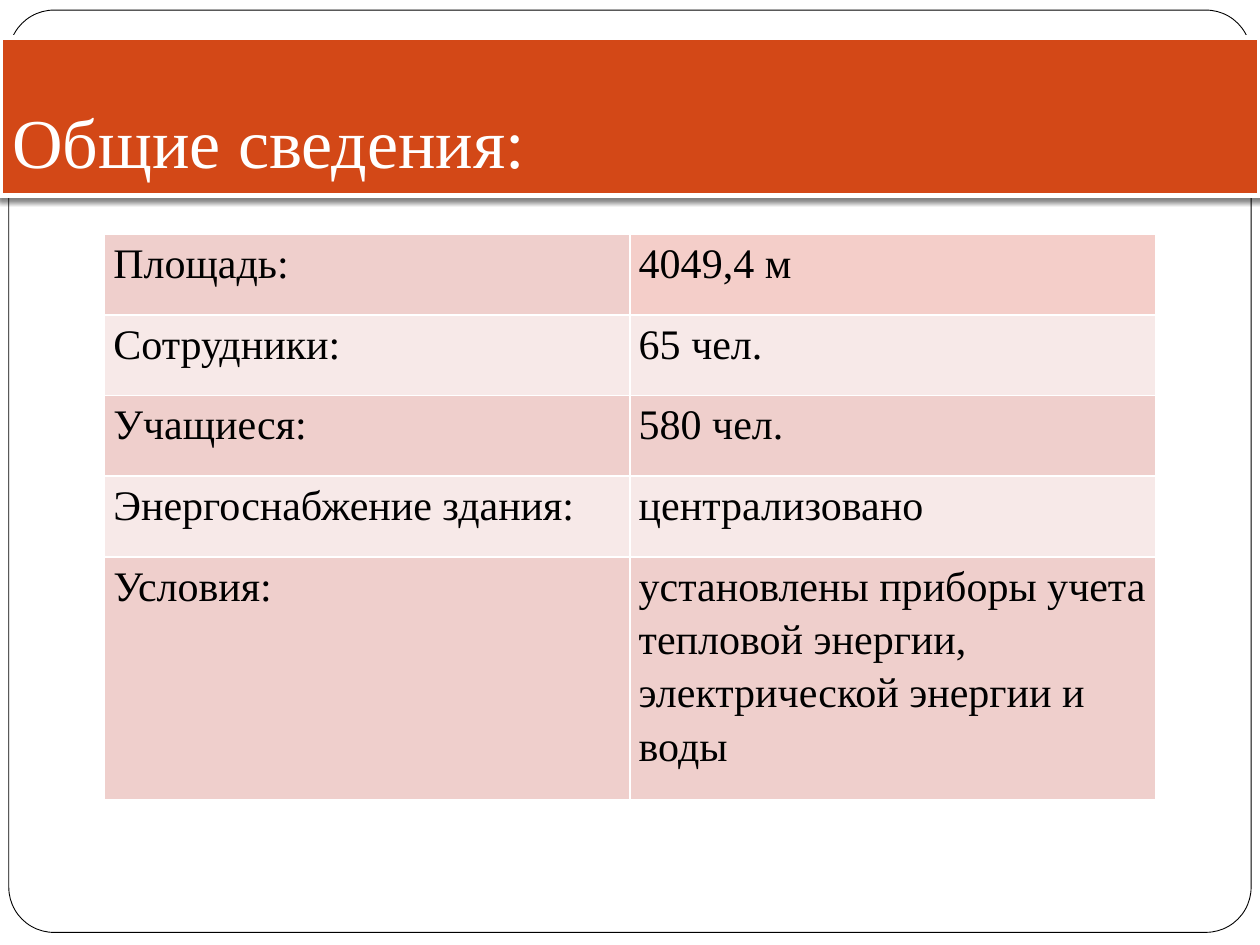
"""Build the general information slide with its title band and table."""
from lxml import etree
from pptx import Presentation
from pptx.dml.color import RGBColor
from pptx.enum.shapes import MSO_SHAPE
from pptx.enum.text import MSO_ANCHOR, PP_ALIGN
from pptx.oxml import parse_xml
from pptx.oxml.ns import nsdecls, qn
from pptx.util import Inches, Pt

RECT, ROUND = MSO_SHAPE.RECTANGLE, MSO_SHAPE.ROUNDED_RECTANGLE
TOP, BOTTOM = MSO_ANCHOR.TOP, MSO_ANCHOR.BOTTOM
LEFT = PP_ALIGN.LEFT
WHITE = RGBColor(0xFF, 0xFF, 0xFF)
BLACK = RGBColor(0, 0, 0)
ORANGE = RGBColor(0xD3, 0x48, 0x17)
ROSE = RGBColor(0xEF, 0xCF, 0xCC)
PALE = RGBColor(0xF7, 0xE9, 0xE8)
PEACH = RGBColor(0xF4, 0xCE, 0xC9)
FACTS = [
    ("Площадь:", "4049,4 м"),
    ("Сотрудники:", "65 чел."),
    ("Учащиеся:", "580 чел."),
    ("Энергоснабжение здания:", "централизовано"),
    ("Условия:", "установлены приборы учета тепловой энергии, электрической энергии и воды"),
]


class Deck:
    font = "Times New Roman"

    def __init__(self, width, height):
        self.prs = Presentation()
        self.prs.slide_width, self.prs.slide_height = Inches(width), Inches(height)
        self.s = self.prs.slides.add_slide(self.prs.slide_layouts[6])

    def shape(self, kind, box, fill, line, weight):
        sp = self.s.shapes.add_shape(kind, *map(Inches, box))
        sp.shadow.inherit = False
        sp.fill.solid()
        sp.fill.fore_color.rgb = fill
        sp.line.color.rgb = line
        sp.line.width = Pt(weight)
        return sp

    def frame(self, box, radius):
        self.shape(ROUND, box, WHITE, BLACK, 0.5).adjustments[0] = radius

    def text(self, tf, text, size, color):
        p = tf.paragraphs[0]
        p.alignment = LEFT
        r = p.add_run()
        r.text = text
        r.font.name, r.font.size = self.font, Pt(size)
        r.font.color.rgb = color
        return p

    def title(self, box, text):
        sp = self.shape(RECT, box, ORANGE, WHITE, 3)
        effects = sp._element.spPr.find(qn("a:effectLst"))
        effects.append(parse_xml(
            f'<a:outerShdw {nsdecls("a")} blurRad="{Pt(3)}" dist="{Pt(2)}" dir="5400000" rotWithShape="0">'
            '<a:srgbClr val="000000"><a:alpha val="50000"/></a:srgbClr></a:outerShdw>'))
        tf = sp.text_frame
        tf.word_wrap = True
        tf.vertical_anchor = BOTTOM
        tf.margin_left = tf.margin_right = tf.margin_bottom = Inches(0.1)
        tf.margin_top = Inches(0.05)
        self.text(tf, text, 40, WHITE)

    def borders(self, cell):
        tcPr = cell._tc.get_or_add_tcPr()
        for side in ("lnL", "lnR", "lnT", "lnB"):
            ln = etree.SubElement(tcPr, qn(f"a:{side}"), w=str(Pt(1)))
            fill = etree.SubElement(ln, qn("a:solidFill"))
            etree.SubElement(fill, qn("a:srgbClr"), val=str(WHITE))

    def cell(self, cell, text, fill):
        self.borders(cell)
        cell.fill.solid()
        cell.fill.fore_color.rgb = fill
        cell.vertical_anchor = TOP
        cell.margin_left = cell.margin_right = Inches(0.07)
        cell.margin_top = cell.margin_bottom = 0
        p = self.text(cell.text_frame, text, 24, BLACK)
        p.line_spacing = 1.15
        p.space_before = p.space_after = Pt(6)

    def table(self, box, rows, heights):
        table = self.s.shapes.add_table(len(rows), len(rows[0]), *map(Inches, box)).table
        table.first_row = table.horz_banding = False
        for i, (row, height) in enumerate(zip(rows, heights)):
            table.rows[i].height = Inches(height)
            for j, text in enumerate(row):
                band = PALE if i % 2 else ROSE
                self.cell(table.cell(i, j), text, PEACH if (i, j) == (0, 1) else band)


def main():
    deck = Deck(10, 7.5)
    deck.frame((0.07, 0.08, 9.86, 7.32), 0.049)
    deck.title((0, 0.3, 10, 1.25), "Общие сведения:")
    deck.table((0.83, 1.86, 8.34, 4.49), FACTS, [0.64] * 4 + [1.93])
    deck.prs.save("out.pptx")


if __name__ == "__main__":
    main()
